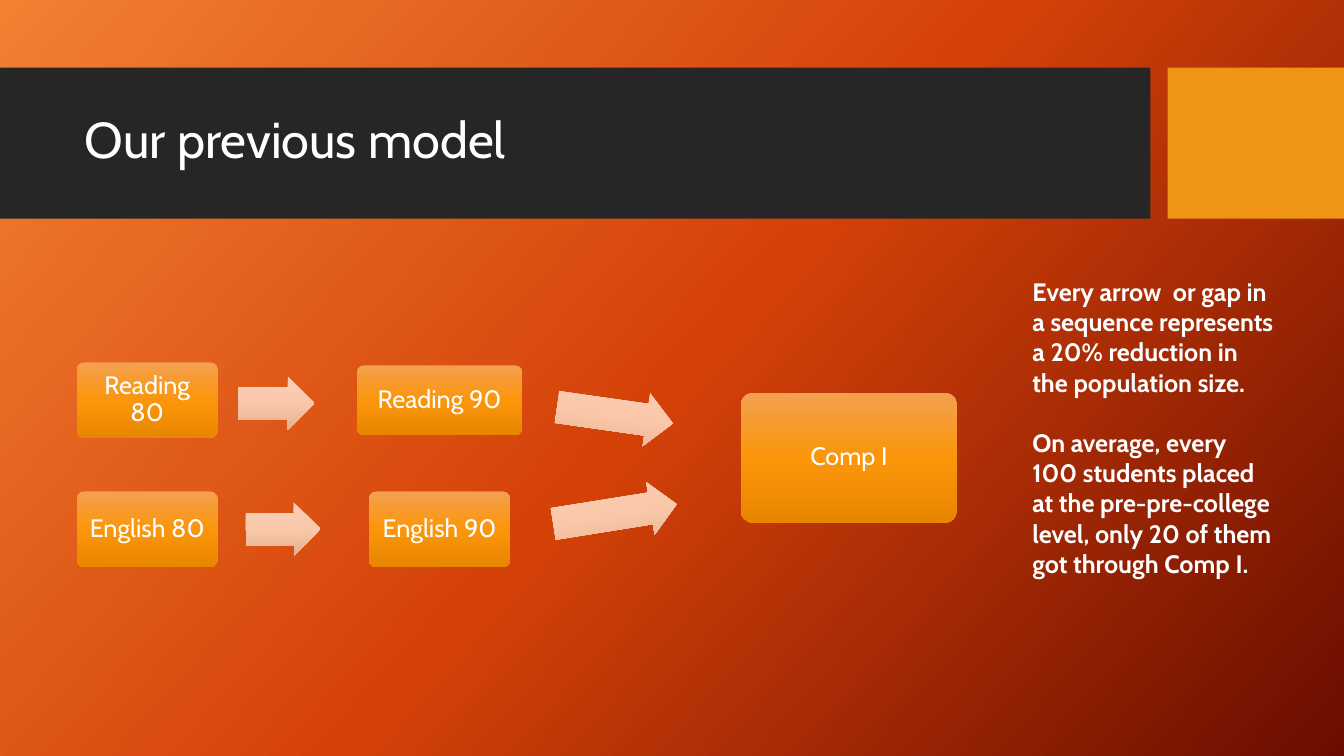
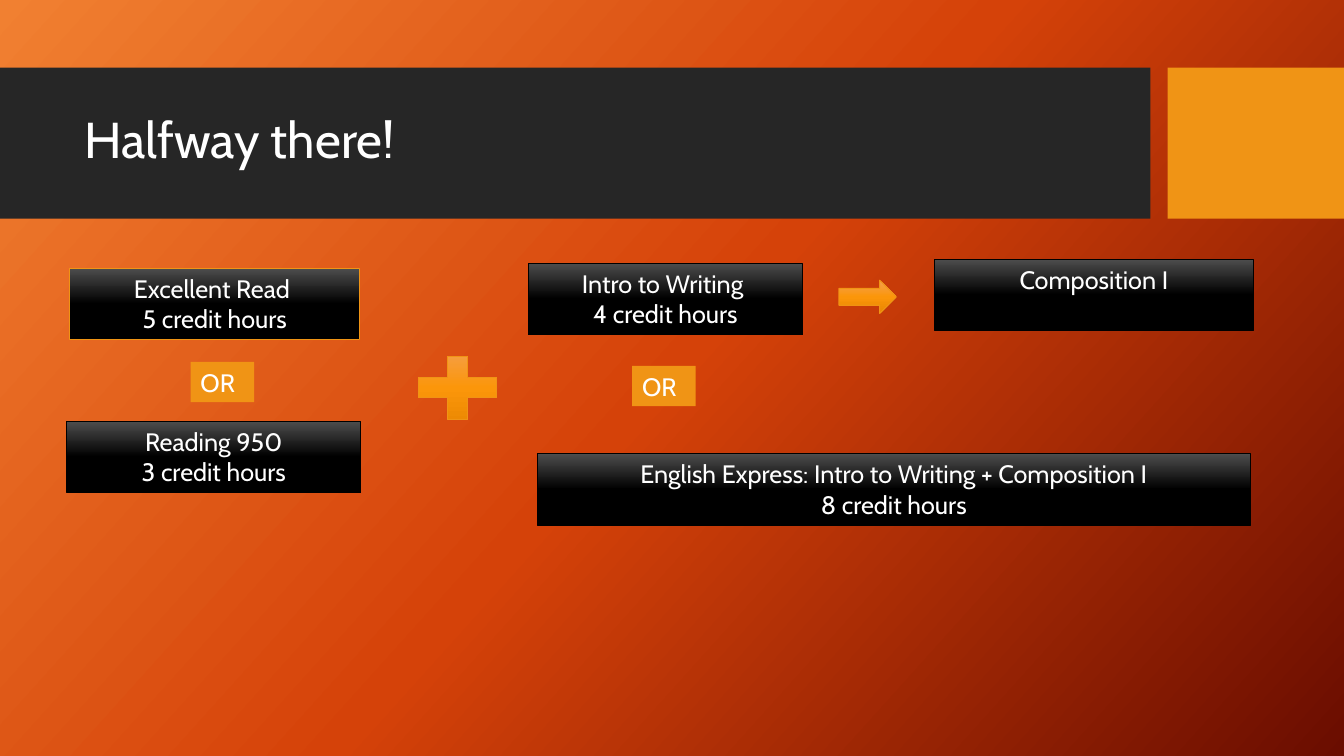
"""Build two slides on the course sequence before and after its redesign."""
from copy import deepcopy
from dataclasses import dataclass

from pptx import Presentation
from pptx.dml.color import RGBColor
from pptx.enum.shapes import MSO_SHAPE
from pptx.enum.text import MSO_ANCHOR, PP_ALIGN
from pptx.util import Inches, Pt


@dataclass(frozen=True)
class Theme:
    """Colours, gradients and type of the deck."""
    font: str = "Cabin"
    title_size: int = 36
    body_size: int = 18
    text: str = "FFFFFF"
    band: str = "262626"
    accent: str = "F09415"
    edge: str = "000000"
    backdrop: tuple = ("F18031", "D54209", "6A0D00")
    course: tuple = ("F4A050", "FB960A", "E88600")
    flow: tuple = ("F8D1B9", "FAC7A8", "E3B090")
    option: tuple = ("4D4D4D", "000000", "000000")


THEME = Theme()
WIDTH, HEIGHT = 13.33, 7.5
BAND_TOP, BAND_HEIGHT = 0.67, 1.5
BANDS = [(0, 11.41, THEME.band), (11.58, 1.75, THEME.accent)]
TITLE_BOX = (0.74, 0.82, 10.51, 1.18)

READING, ENGLISH = 3.97, 5.25
FIRST, SECOND, COMP = 1.46, 4.36, 8.42
COURSES = [
    ("Reading 80", FIRST, READING, 1.4, 0.75),
    ("Reading 90", SECOND, READING, 1.64, 0.69),
    ("English 80", FIRST, ENGLISH, 1.4, 0.75),
    ("English 90", SECOND, ENGLISH, 1.4, 0.75),
    ("Comp I", COMP, 4.54, 2.15, 1.29),
]
FLOW_HEIGHT = 0.53
FLOWS = [
    (2.74, 4.0, 0.76, 0),
    (2.81, 5.25, 0.74, -0.5),
    (6.1, 4.12, 1.16, 8.1),
    (6.1, 5.1, 1.24, -9.1),
]
NOTE_BOX = (10.14, 2.69, 2.59, 3.74)
NOTE = [
    "Every arrow  or gap in a sequence represents a 20% reduction in the population size.",
    "On average, every 100 students placed at the pre-pre-college level, "
    "only 20 of them got through Comp I.",
]

OPTION_HEIGHT = 0.71
OPTIONS = [
    (["Excellent Read ", "5 credit hours"], 0.69, 2.66, 2.88, THEME.accent),
    (["Reading 950", "3 credit hours"], 0.66, 4.18, 2.92, THEME.edge),
    (["Intro to Writing ", "4 credit hours"], 5.24, 2.61, 2.72, THEME.edge),
    (["English Express: Intro to Writing + Composition I", "8 credit hours"],
     5.33, 4.5, 7.07, THEME.edge),
    (["Composition I"], 9.27, 2.57, 3.16, THEME.edge),
]
CHOICES = [(1.89, 3.59), (6.27, 3.63)]
CHOICE_SIZE = (0.63, 0.4)
SIGNS = [
    (MSO_SHAPE.RIGHT_ARROW, (8.32, 2.78, 0.57, 0.33)),
    (MSO_SHAPE.MATH_PLUS, (4.01, 3.42, 1.06, 0.85)),
]


def paint(fill, owner, colours, angle=90):
    """Fill with one colour, or with three stops running clockwise at an angle."""
    if isinstance(colours, str):
        fill.solid()
        fill.fore_color.rgb = RGBColor.from_string(colours)
        return
    fill.gradient()
    fill.gradient_angle = 360 - angle
    stops = owner.xpath(".//a:gsLst")[0]
    stops.insert(1, deepcopy(stops[0]))
    for stop, colour, position in zip(fill.gradient_stops, colours, (0, 0.5, 1)):
        stop.color.rgb = RGBColor.from_string(colour)
        stop.position = position


def write(frame, lines, align=PP_ALIGN.LEFT, anchor=MSO_ANCHOR.MIDDLE,
          size=THEME.body_size, bold=False, spacing=1.0, gap=0):
    """Write each line as a paragraph in the theme's type."""
    frame.word_wrap = True
    frame.vertical_anchor = anchor
    for index, line in enumerate(lines):
        paragraph = frame.paragraphs[0] if index == 0 else frame.add_paragraph()
        paragraph.alignment = align
        paragraph.line_spacing = spacing
        paragraph.space_before = Pt(gap if index else 0)
        run = paragraph.add_run()
        run.text = line
        run.font.name = THEME.font
        run.font.size = Pt(size)
        run.font.bold = bold
        run.font.color.rgb = RGBColor.from_string(THEME.text)


def add_block(slide, kind, box, colours, edge=None):
    """Add a shadowless preset shape."""
    block = slide.shapes.add_shape(kind, *map(Inches, box))
    block.shadow.inherit = False
    paint(block.fill, block._element, colours)
    if edge:
        block.line.color.rgb = RGBColor.from_string(edge)
        block.line.width = Pt(0.75)
    else:
        block.line.fill.background()
    return block


def centred(x, y, width, height):
    """Turn a centre and a size into a box."""
    return x - width / 2, y - height / 2, width, height


def add_titled_slide(deck, layout, title):
    """Add a slide and set its title on the band."""
    slide = deck.slides.add_slide(layout)
    heading = slide.shapes.title
    heading.left, heading.top, heading.width, heading.height = map(Inches, TITLE_BOX)
    write(heading.text_frame, [title], size=THEME.title_size, spacing=0.9)
    return slide


def dress_layout(layout, slide):
    """Give the layout its backdrop and the bands behind every title."""
    paint(layout.background.fill, layout._element, THEME.backdrop, 42)
    for index, (left, width, colour) in enumerate(BANDS):
        band = add_block(slide, MSO_SHAPE.RECTANGLE,
                         (left, BAND_TOP, width, BAND_HEIGHT), colour)
        band._element.xpath(".//p:cNvPr")[0].set("id", str(100 + index))
        layout.shapes._spTree.insert(2 + index, band._element)


def draw_previous_model(slide):
    """Draw the course chain and the note beside it."""
    for name, x, y, width, height in COURSES:
        course = add_block(slide, MSO_SHAPE.ROUNDED_RECTANGLE,
                           centred(x, y, width, height), THEME.course)
        course.adjustments[0] = 0.1
        frame = course.text_frame
        frame.margin_left = frame.margin_right = Inches(0.08)
        write(frame, [name], PP_ALIGN.CENTER, spacing=0.9)
    for x, y, width, turn in FLOWS:
        flow = add_block(slide, MSO_SHAPE.RIGHT_ARROW,
                         centred(x, y, width, FLOW_HEIGHT), THEME.flow)
        flow.adjustments[0] = 0.6
        flow.rotation = turn
    note = slide.shapes.add_textbox(*map(Inches, NOTE_BOX))
    write(note.text_frame, NOTE, anchor=MSO_ANCHOR.TOP, bold=True, gap=21.6)


def draw_halfway(slide):
    """Draw the course options, the choices between them and the signs."""
    for lines, left, top, width, edge in OPTIONS:
        option = add_block(slide, MSO_SHAPE.RECTANGLE,
                           (left, top, width, OPTION_HEIGHT), THEME.option, edge)
        write(option.text_frame, lines, PP_ALIGN.CENTER, MSO_ANCHOR.TOP)
    for corner in CHOICES:
        choice = add_block(slide, MSO_SHAPE.RECTANGLE, corner + CHOICE_SIZE, THEME.accent)
        write(choice.text_frame, ["OR"])
    for kind, box in SIGNS:
        add_block(slide, kind, box, THEME.course, THEME.accent)


def main():
    """Build and save the deck."""
    deck = Presentation()
    deck.slide_width, deck.slide_height = Inches(WIDTH), Inches(HEIGHT)
    layout = deck.slide_layouts[5]
    previous = add_titled_slide(deck, layout, "Our previous model")
    dress_layout(layout, previous)
    draw_previous_model(previous)
    draw_halfway(add_titled_slide(deck, layout, "Halfway there!"))
    deck.save("out.pptx")


if __name__ == "__main__":
    main()
